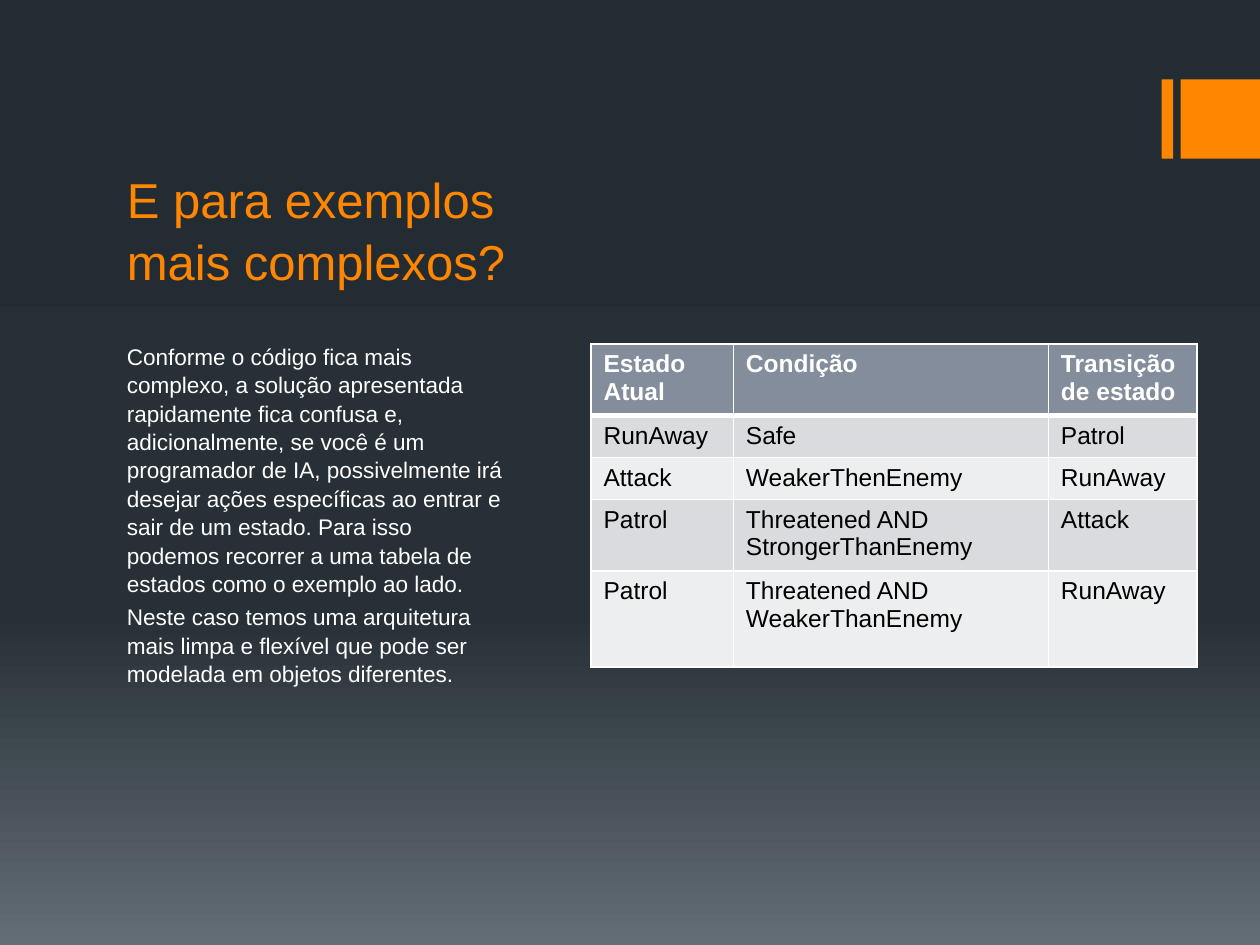
from copy import deepcopy
from dataclasses import dataclass

from lxml import etree
from pptx import Presentation
from pptx.dml.color import RGBColor
from pptx.enum.shapes import MSO_SHAPE
from pptx.enum.text import MSO_ANCHOR
from pptx.oxml.ns import qn
from pptx.util import Inches, Pt

RECT = MSO_SHAPE.RECTANGLE
TOP, BOTTOM = MSO_ANCHOR.TOP, MSO_ANCHOR.BOTTOM


@dataclass(frozen=True)
class Theme:
    font: str = "Arial"
    accent: str = "FF8600"
    light: str = "FFFFFF"
    dark: str = "000000"
    header: str = "838D9B"
    bands: tuple = ("D9DBDE", "EDEEEF")
    backdrop: tuple = ((0, "242C33"), (0.65, "273037"), (1, "636D76"))
    title_size: float = 28
    body_size: float = 12.9
    table_size: float = 14


theme = Theme()


def add_text(s, box, paragraphs, size, color, anchor):
    tf = s.shapes.add_textbox(*map(Inches, box)).text_frame
    tf.word_wrap = True
    tf.vertical_anchor = anchor
    for i, text in enumerate(paragraphs):
        p = tf.add_paragraph() if i else tf.paragraphs[0]
        p.text = text
        p.line_spacing = 1.05
        if i:
            p.space_before = Pt(0.2 * size)
        p.font.name, p.font.size = theme.font, Pt(size)
        p.font.color.rgb = RGBColor.from_string(color)


def set_borders(cell, top, bottom):
    """Draw all four cell edges; widths are in points."""
    tcPr = cell._tc.get_or_add_tcPr()
    edges = (("lnL", 1), ("lnR", 1), ("lnT", top), ("lnB", bottom))
    for i, (tag, width) in enumerate(edges):
        ln = etree.Element(qn(f"a:{tag}"), w=str(Pt(width)))
        fill = etree.SubElement(ln, qn("a:solidFill"))
        etree.SubElement(fill, qn("a:srgbClr"), val=theme.light)
        tcPr.insert(i, ln)


prs = Presentation()
prs.slide_width, prs.slide_height = Inches(10), Inches(7.5)
s = prs.slides.add_slide(prs.slide_layouts[6])

# Background gradient, running from top to bottom
fill = s.background.fill
fill.gradient()
fill.gradient_angle = 270
stops = s._element.find(f".//{qn('a:gsLst')}")
stops.append(deepcopy(stops[-1]))
for stop, (position, color) in zip(fill.gradient_stops, theme.backdrop):
    stop.position = position
    stop.color.rgb = RGBColor.from_string(color)

# Accent bars at the right edge
for left, width in ((9.22, 0.09), (9.37, 0.63)):
    sp = s.shapes.add_shape(RECT, Inches(left), Inches(0.63), Inches(width), Inches(0.63))
    sp.shadow.inherit = False
    sp.fill.solid()
    sp.fill.fore_color.rgb = RGBColor.from_string(theme.accent)
    sp.line.fill.background()

add_text(s, (0.91, -0.03, 3.23, 2.38), ["E para exemplos mais complexos?"],
         theme.title_size, theme.accent, BOTTOM)
add_text(s, (0.91, 2.66, 3.23, 2.75), [
    "Conforme o código fica mais complexo, a solução apresentada rapidamente "
    "fica confusa e, adicionalmente, se você é um programador de IA, "
    "possivelmente irá desejar ações específicas ao entrar e sair de um estado. "
    "Para isso podemos recorrer a uma tabela de estados como o exemplo ao lado.",
    "Neste caso temos uma arquitetura mais limpa e flexível que pode ser "
    "modelada em objetos diferentes.",
], theme.body_size, theme.light, TOP)

# State transition table
transitions = [
    ("Estado Atual", "Condição", "Transição de estado"),
    ("RunAway", "Safe", "Patrol"),
    ("Attack", "WeakerThenEnemy", "RunAway"),
    ("Patrol", "Threatened AND StrongerThanEnemy", "Attack"),
    ("Patrol", "Threatened AND WeakerThanEnemy", "RunAway"),
]
col_widths = (1.13, 2.5, 1.18)
row_heights = (0.53, 0.32, 0.32, 0.54, 0.76)
table = s.shapes.add_table(len(row_heights), len(col_widths), Inches(4.69), Inches(2.73),
                           Inches(sum(col_widths)), Inches(sum(row_heights))).table
table.horz_banding = False
for column, width in zip(table.columns, col_widths):
    column.width = Inches(width)
for r, (row, height) in enumerate(zip(table.rows, row_heights)):
    row.height = Inches(height)
    is_header = r == 0
    band = theme.header if is_header else theme.bands[(r - 1) % 2]
    for cell, text in zip(row.cells, transitions[r]):
        cell.text = text
        cell.fill.solid()
        cell.fill.fore_color.rgb = RGBColor.from_string(band)
        set_borders(cell, top=3 if r == 1 else 1, bottom=3 if is_header else 1)
        font = cell.text_frame.paragraphs[0].font
        font.name, font.size, font.bold = theme.font, Pt(theme.table_size), is_header
        font.color.rgb = RGBColor.from_string(theme.light if is_header else theme.dark)

prs.save("out.pptx")
